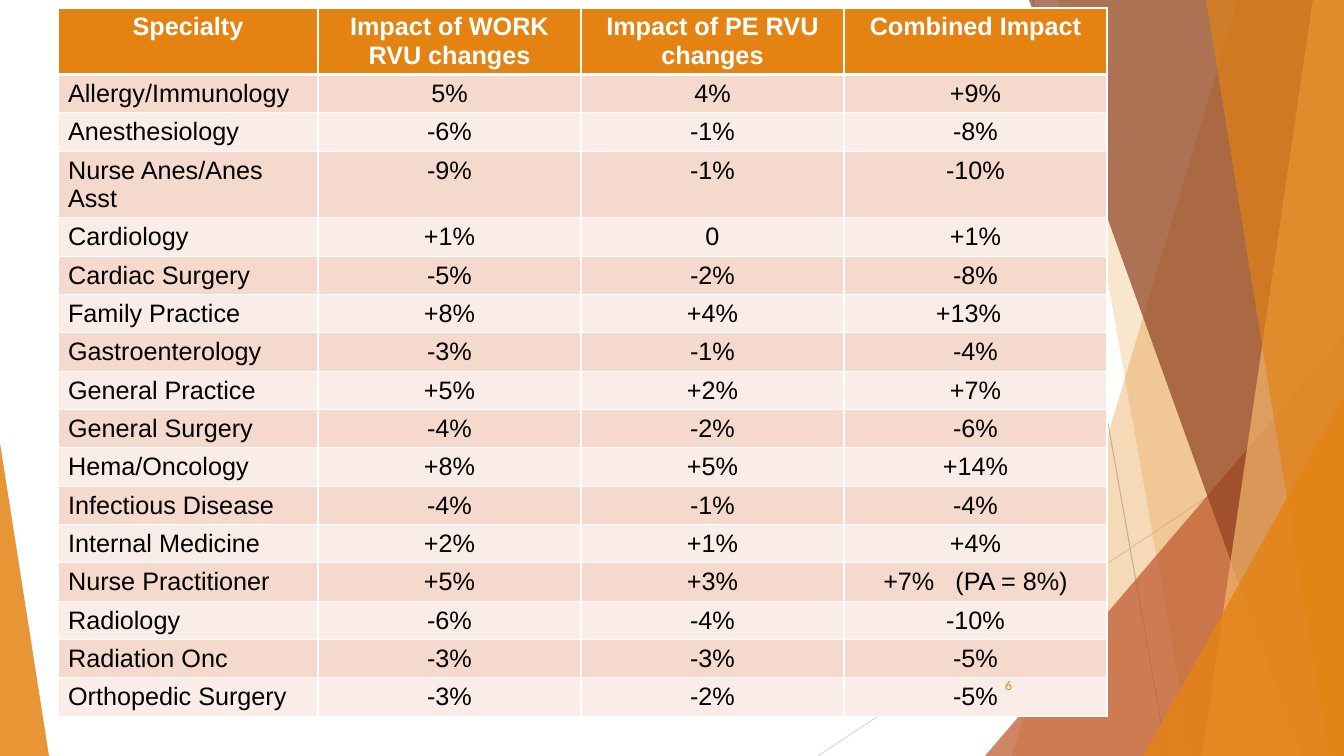
import lxml.etree
import pptx
import pptx.dml.color
import pptx.enum.shapes
import pptx.enum.text
import pptx.oxml.ns
import pptx.util

SLIDE_WIDTH, SLIDE_HEIGHT = 1344, 756
SCALE = 12192000 / SLIDE_WIDTH

COLORS = {
    "orange": "E48312", "rust": "BD582C", "brown": "8E4221", "peach": "F3B56C",
    "gray": "BFBFBF", "light gray": "D9D9D9",
    "dark band": "F5D9CC", "light band": "FAEDE7",
    "white": "FFFFFF", "black": "000000",
}

# Thin lines: start x, y, end x, y, colour
LINES = [
    (1033, 0, 1167, 756, "gray"),
    (1344, 406, 818, 756, "light gray"),
]

# Bands reach the right edge: left x at the top, at the bottom, colour, opacity
BACK_BANDS = [(1238, 1012, "orange", 30), (1058, 1192, "orange", 20)]
FRONT_BANDS = [
    (1029, 1301, "brown", 70),
    (1313, 1202, "peach", 70),
    (1206, 1329, "orange", 65),
]

HEADER = ["Specialty", "Impact of WORK RVU changes", "Impact of PE RVU changes", "Combined Impact"]
SPECIALTIES = [
    ["Allergy/Immunology", "5%", "4%", "+9%"],
    ["Anesthesiology", "-6%", "-1%", "-8%"],
    ["Nurse Anes/Anes Asst", "-9%", "-1%", "-10%"],
    ["Cardiology", "+1%", "0", "+1%"],
    ["Cardiac Surgery", "-5%", "-2%", "-8%"],
    ["Family Practice", "+8%", "+4%", "+13%"],
    ["Gastroenterology", "-3%", "-1%", "-4%"],
    ["General Practice", "+5%", "+2%", "+7%"],
    ["General Surgery", "-4%", "-2%", "-6%"],
    ["Hema/Oncology", "+8%", "+5%", "+14%"],
    ["Infectious Disease", "-4%", "-1%", "-4%"],
    ["Internal Medicine", "+2%", "+1%", "+4%"],
    ["Nurse Practitioner", "+5%", "+3%", "+7% (PA = 8%)"],
    ["Radiology", "-6%", "-4%", "-10%"],
    ["Radiation Onc", "-3%", "-3%", "-5%"],
    ["Orthopedic Surgery", "-3%", "-2%", "-5%"],
]
COLUMN_WIDTHS = [260, 263, 263, 263]
HEADER_HEIGHT, ROW_HEIGHT = 66, 38


def px(length):
    return pptx.util.Emu(round(length * SCALE))


def rgb(name):
    return pptx.dml.color.RGBColor.from_string(COLORS[name])


def add_child(parent, tag, **attributes):
    return lxml.etree.SubElement(parent, pptx.oxml.ns.qn(tag), **attributes)


def paint(shape, color, opacity):
    shape.shadow.inherit = False
    shape.line.fill.background()
    shape.fill.solid()
    shape.fill.fore_color.rgb = rgb(color)
    color_element = shape.fill._xPr.find(".//" + pptx.oxml.ns.qn("a:srgbClr"))
    add_child(color_element, "a:alpha", val=str(opacity * 1000))


def add_line(slide, start_x, start_y, end_x, end_y, color):
    line = slide.shapes.add_connector(
        pptx.enum.shapes.MSO_CONNECTOR.STRAIGHT,
        px(start_x), px(start_y), px(end_x), px(end_y))
    line.line.color.rgb = rgb(color)
    line.line.width = pptx.util.Pt(0.75)
    add_child(line._element.spPr, "a:effectLst")


def add_band(slide, top_x, bottom_x, color, opacity):
    builder = slide.shapes.build_freeform(top_x, 0, scale=SCALE)
    builder.add_line_segments(
        [(SLIDE_WIDTH, 0), (SLIDE_WIDTH, SLIDE_HEIGHT), (bottom_x, SLIDE_HEIGHT)])
    paint(builder.convert_to_shape(), color, opacity)


def add_triangle(slide, left, top, width, apex, color, opacity):
    triangle = slide.shapes.add_shape(
        pptx.enum.shapes.MSO_SHAPE.ISOSCELES_TRIANGLE,
        px(left), px(top), px(width), px(SLIDE_HEIGHT - top))
    triangle.adjustments[0] = apex
    paint(triangle, color, opacity)


def set_borders(cell, top, bottom):
    properties = cell._tc.get_or_add_tcPr()
    for side, points in (("L", 1), ("R", 1), ("T", top), ("B", bottom)):
        border = add_child(properties, "a:ln" + side, w=str(pptx.util.Pt(points)))
        add_child(add_child(border, "a:solidFill"), "a:srgbClr", val=COLORS["white"])


def format_text(paragraph, size, font_name, color, alignment, bold=False):
    paragraph.alignment = getattr(pptx.enum.text.PP_ALIGN, alignment)
    paragraph.font.size = pptx.util.Pt(size)
    paragraph.font.name = font_name
    paragraph.font.bold = bold
    paragraph.font.color.rgb = rgb(color)


def fill_cell(cell, text, row, column):
    is_header = row == 0
    set_borders(cell, top=3 if row == 1 else 1, bottom=3 if is_header else 1)
    cell.fill.solid()
    band = "dark band" if row % 2 else "light band"
    cell.fill.fore_color.rgb = rgb("orange" if is_header else band)
    paragraph = cell.text_frame.paragraphs[0]
    paragraph.add_run().text = text
    format_text(paragraph, 18, "Arial", "white" if is_header else "black",
                "CENTER" if is_header or column else "LEFT", is_header)


def widen_first_space(paragraph, points):
    first, rest = paragraph.runs[0].text.split(" ", 1)
    paragraph.runs[0].text = first
    gap = paragraph.add_run()
    gap.text = " "
    gap._r.get_or_add_rPr().set("spc", str(points * 100))
    paragraph.add_run().text = rest


def add_impact_table(slide):
    rows = [HEADER] + SPECIALTIES
    height = HEADER_HEIGHT + ROW_HEIGHT * len(SPECIALTIES)
    table = slide.shapes.add_table(
        len(rows), len(HEADER), px(58), px(8), px(sum(COLUMN_WIDTHS)), px(height)).table
    for column, width in zip(table.columns, COLUMN_WIDTHS):
        column.width = px(width)
    for row, texts in enumerate(rows):
        table.rows[row].height = px(ROW_HEIGHT if row else HEADER_HEIGHT)
        for column, text in enumerate(texts):
            fill_cell(table.cell(row, column), text, row, column)

    # Two combined values sit a little differently from the rest
    names = [texts[0] for texts in rows]
    table.cell(names.index("Family Practice"), 3).margin_right = px(24)
    practitioner = table.cell(names.index("Nurse Practitioner"), 3)
    widen_first_space(practitioner.text_frame.paragraphs[0], 10)


def add_slide_number(slide, number):
    box = slide.shapes.add_textbox(px(947), px(666), px(75), px(40))
    frame = box.text_frame
    frame.word_wrap = True
    frame.vertical_anchor = pptx.enum.text.MSO_ANCHOR.MIDDLE
    paragraph = frame.paragraphs[0]
    paragraph.add_run().text = number
    format_text(paragraph, 9, "Lato", "orange", "RIGHT")


def main():
    presentation = pptx.Presentation()
    presentation.slide_width = px(SLIDE_WIDTH)
    presentation.slide_height = px(SLIDE_HEIGHT)
    slide = presentation.slides.add_slide(presentation.slide_layouts[6])

    # Faceted backdrop, back to front
    for line in LINES:
        add_line(slide, *line)
    for band in BACK_BANDS:
        add_band(slide, *band)
    add_triangle(slide, 985, 336, 359, 1, "rust", 72)
    for band in FRONT_BANDS:
        add_band(slide, *band)
    add_triangle(slide, 1143, 396, 201, 1, "orange", 80)
    add_triangle(slide, 0, 443, 49, 0, "orange", 85)

    # Content
    add_impact_table(slide)
    add_slide_number(slide, "6")
    presentation.save("out.pptx")


if __name__ == "__main__":
    main()
